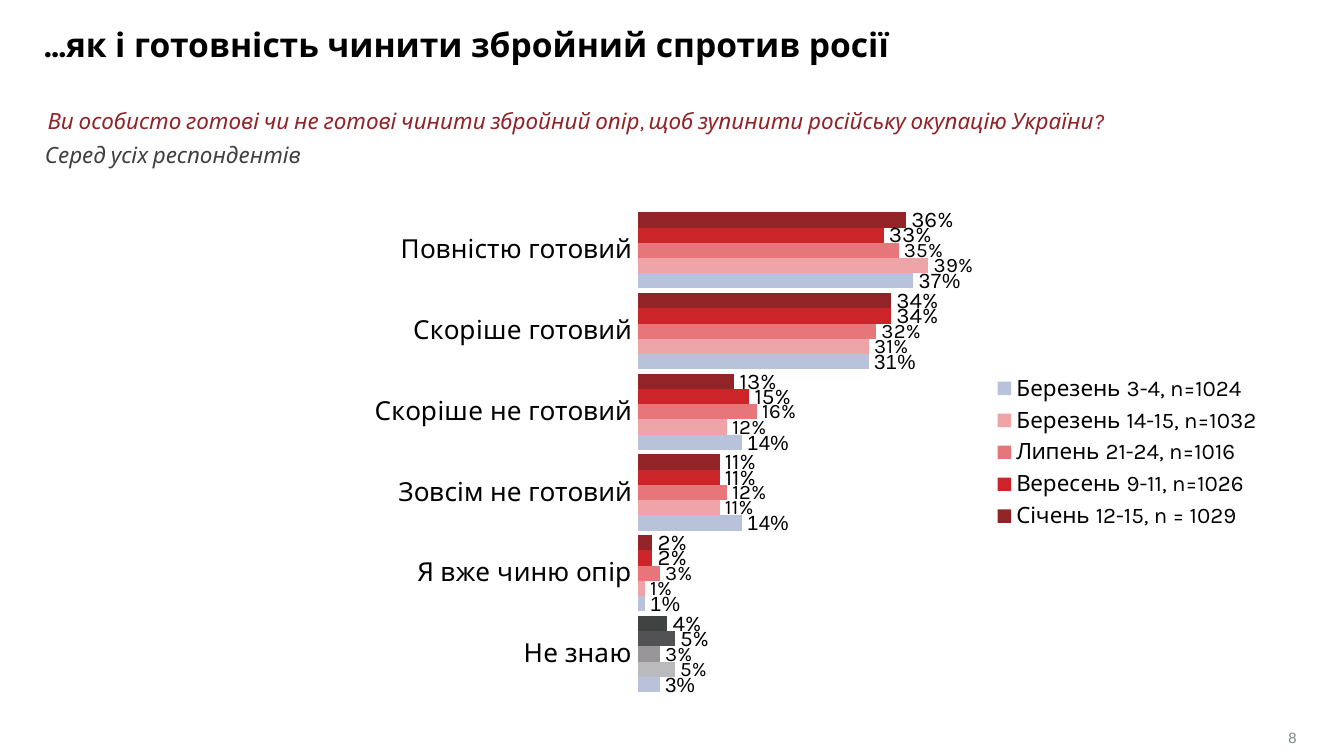
from lxml.etree import SubElement
from pptx import Presentation
from pptx.chart.data import CategoryChartData as Data
from pptx.dml.color import RGBColor as Rgb
from pptx.enum.chart import XL_CHART_TYPE as Kind, XL_LABEL_POSITION as Pos
from pptx.enum.chart import XL_LEGEND_POSITION as Side, XL_TICK_LABEL_POSITION as Tick
from pptx.enum.chart import XL_TICK_MARK as Mark
from pptx.enum.shapes import MSO_SHAPE as Form
from pptx.enum.text import MSO_ANCHOR as Anchor, PP_ALIGN as Align
from pptx.oxml.ns import qn
from pptx.util import Cm, Pt

HUES = {
    "black": "000000", "text": "404040", "page": "808585", "wine": "922428",
    "red": "CC2529", "rose": "E67679", "pink": "EEA4A6", "blue": "B8C2DB",
    "coal": "3F4342", "dark": "525153", "grey": "99969A", "pale": "BAB9BB",
    "white": "FFFFFF",
}

TEXTS = [
    ("...як і готовність чинити збройний спротив росії",
     (0.84, 0.46, 22.53, 0.76), (0, 0), 18, "black", True, False),
    ("Ви особисто готові чи не готові чинити збройний опір, щоб зупинити російську окупацію України?",
     (0.9, 2.02, 20.4, 0.51), (0, 0), 12, "wine", False, True),
    ("Серед усіх респондентів",
     (0.6, 2.53, 7.01, 0.76), (0.25, 0.13), 12, "text", False, True),
]

CATS = ["Повністю готовий", "Скоріше готовий", "Скоріше не готовий",
        "Зовсім не готовий", "Я вже чиню опір", "Не знаю"]

WAVES = [
    ("Січень 12-15, n = 1029", (36, 34, 13, 11, 2, 4), "wine", "coal", 12, "Karla"),
    ("Вересень 9-11, n=1026", (33, 34, 15, 11, 2, 5), "red", "dark", 12, "Karla"),
    ("Липень 21-24, n=1016", (35, 32, 16, 12, 3, 3), "rose", "grey", 11, "Karla"),
    ("Березень 14-15, n=1032", (39, 31, 12, 11, 1, 5), "pink", "pale", 11, "Karla"),
    ("Березень 3-4, n=1024", (37, 31, 14, 14, 1, 3), "blue", "blue", 11, "Arial"),
]

PLOT = {"x": 0.518, "y": 0.023, "w": 0.282, "h": 0.954}


def style(font, size, hue, face="Karla"):
    font.name = face
    font.size = Pt(size)
    font.color.rgb = Rgb.from_string(HUES[hue])


def paint(fill, hue):
    fill.solid()
    fill.fore_color.rgb = Rgb.from_string(HUES[hue])


def write(shape, text, pad, size, hue, bold=False, slant=False, face="Karla"):
    frame = shape.text_frame
    frame.word_wrap = True
    frame.margin_left = frame.margin_right = Cm(pad[0])
    frame.margin_top = frame.margin_bottom = Cm(pad[1])
    frame.text = text
    font = frame.paragraphs[0].runs[0].font
    style(font, size, hue, face)
    font.bold, font.italic = bold, slant
    return frame


def number(slide):
    area = map(Cm, (20.9, 13.74, 3.61, 0.41))
    box = slide.shapes.add_shape(Form.RECTANGLE, *area)
    box.shadow.inherit = False
    box.line.fill.background()
    paint(box.fill, "white")
    frame = write(box, "8", (0, 0), 8, "page", face="Arial")
    frame.vertical_anchor = Anchor.MIDDLE
    frame.paragraphs[0].alignment = Align.RIGHT


def place(chart):
    area = chart.plots[0]._element.getparent()
    for old in area.findall(qn("c:layout")):
        area.remove(old)
    layout = SubElement(area, qn("c:layout"))
    area.insert(0, layout)
    manual = SubElement(layout, qn("c:manualLayout"))
    rules = [("layoutTarget", "inner"), ("xMode", "edge"), ("yMode", "edge")]
    for tag, val in rules + list(PLOT.items()):
        SubElement(manual, qn("c:" + tag)).set("val", str(val))


def draw(slide):
    data = Data(number_format="0%")
    data.categories = CATS
    for name, vals, *_ in WAVES:
        data.add_series(name, [val / 100 for val in vals])
    area = map(Cm, (-0.9, 3.75, 25, 9.6))
    chart = slide.shapes.add_chart(Kind.BAR_CLUSTERED, *area, data).chart
    chart.has_title = False
    style(chart.font, 11, "black", "Arial")

    cat, val = chart.category_axis, chart.value_axis
    cat.reverse_order = True
    cat.major_tick_mark = cat.minor_tick_mark = Mark.NONE
    cat.tick_label_position = Tick.NEXT_TO_AXIS
    cat.format.line.fill.background()
    style(cat.tick_labels.font, 14, "black")
    val.minimum_scale, val.maximum_scale = 0, 0.5
    val.major_tick_mark = val.minor_tick_mark = Mark.NONE
    val.has_major_gridlines = False
    val.visible = False

    plot = chart.plots[0]
    plot.gap_width, plot.overlap = 30, 0
    plot.vary_by_categories = False
    for bars, (_, _, hue, last, size, face) in zip(plot.series, WAVES):
        paint(bars.format.fill, hue)
        if last != hue:
            paint(bars.points[len(CATS) - 1].format.fill, last)
        tags = bars.data_labels
        tags.show_value = True
        tags.position = Pos.OUTSIDE_END
        tags.number_format = "0%"
        tags.number_format_is_linked = False
        style(tags.font, size, "black", face)

    chart.has_legend = True
    chart.legend.position = Side.RIGHT
    chart.legend.include_in_layout = False
    style(chart.legend.font, 12, "black")
    place(chart)


def main():
    deck = Presentation()
    deck.slide_width, deck.slide_height = Cm(25.4), Cm(14.29)
    slide = deck.slides.add_slide(deck.slide_layouts[6])
    number(slide)
    draw(slide)
    for text, area, *look in TEXTS:
        write(slide.shapes.add_textbox(*map(Cm, area)), text, *look)
    deck.save("out.pptx")


if __name__ == "__main__":
    main()
